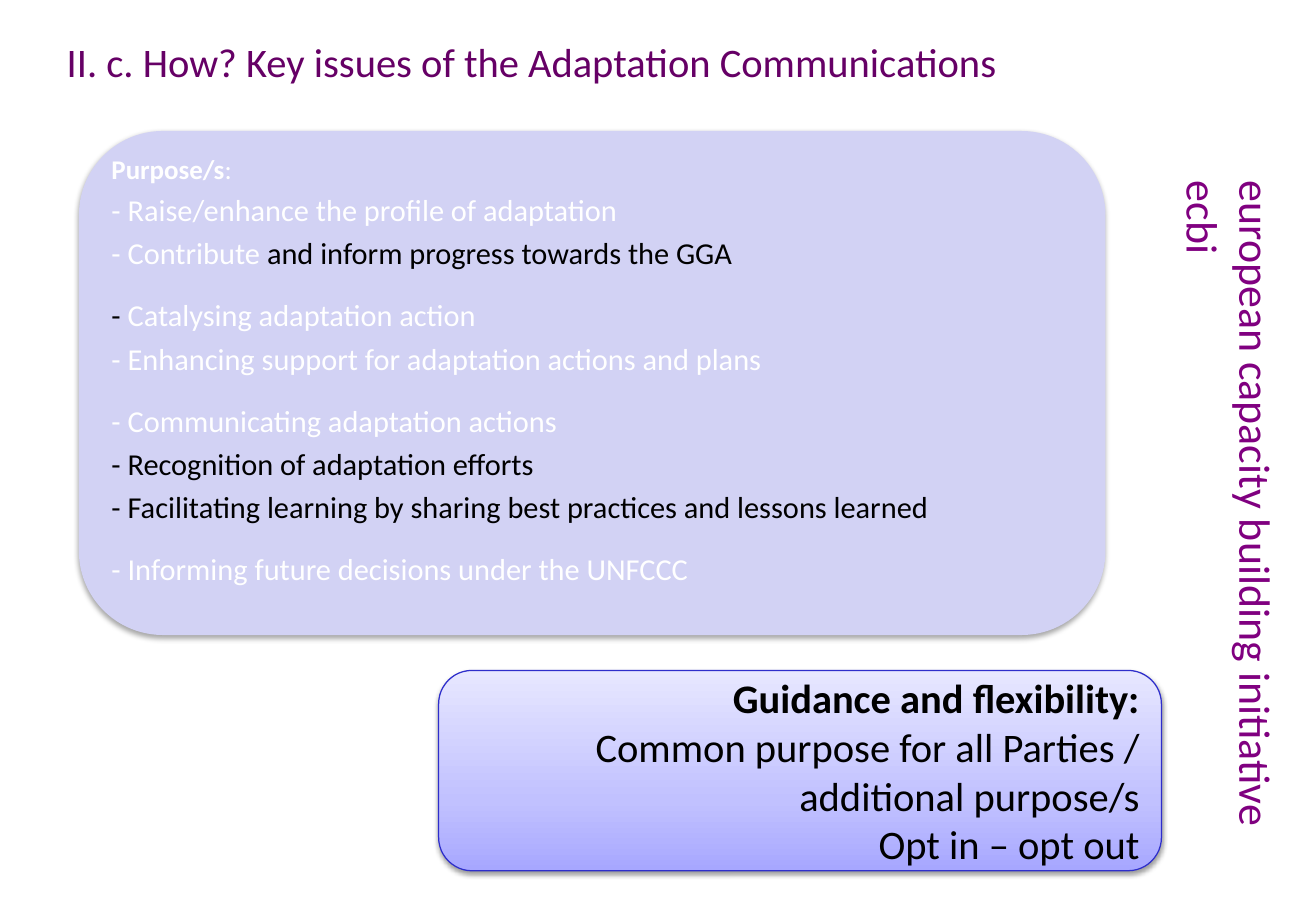
from copy import deepcopy
from dataclasses import dataclass

from lxml import etree
from pptx import Presentation
from pptx import util as u
from pptx.dml.color import RGBColor
from pptx.enum import shapes, text
from pptx.oxml.ns import qn


@dataclass(frozen=True)
class Theme:
    font: str = "Calibri"
    title: str = "660066"
    side: str = "800080"
    faded: str = "FFFFFF"
    strong: str = "000000"
    panel: str = "D2D2F4"
    border: str = "2E2ECB"
    gradient: tuple = ((0, "A7A7FF"), (0.35, "C1C1FF"), (1, "E7E7FF"))
    side_size: int = 26
    large_size: int = 24
    item_size: int = 18
    heading_size: int = 16


THEME = Theme()

PURPOSES = [
    [[("- Raise/enhance the profile of adaptation", THEME.faded)],
     [("- Contribute ", THEME.faded),
      ("and inform progress towards the GGA", THEME.strong)]],
    [[("- ", THEME.strong), ("Catalysing adaptation action", THEME.faded)],
     [("- Enhancing support for adaptation actions and plans", THEME.faded)]],
    [[("- Communicating adaptation actions", THEME.faded)],
     [("- Recognition of adaptation efforts", THEME.strong)],
     [("- Facilitating learning by sharing best practices and lessons learned",
       THEME.strong)]],
    [[("- Informing future decisions under the UNFCCC", THEME.faded)]],
]
GUIDANCE = [
    ("Guidance and flexibility:", True),
    ("Common purpose for all Parties / additional purpose/s", False),
    ("Opt in – opt out", False),
]


def place(part, box):
    part.left, part.top, part.width, part.height = (u.Cm(n) for n in box)


def write(paragraph, wording, *, size, color, bold=False, align=text.PP_ALIGN.LEFT):
    paragraph.alignment = align
    run = paragraph.add_run()
    run.text = wording
    run.font.name = THEME.font
    run.font.size = u.Pt(size)
    run.font.bold = bold
    run.font.color.rgb = RGBColor.from_string(color)


def next_paragraph(frame):
    first = frame.paragraphs[0]
    return frame.add_paragraph() if first.runs else first


def add_shadow(shape, opacity, distance):
    shape.shadow.inherit = False
    effects = shape.element.spPr.find(qn("a:effectLst"))
    outer = etree.SubElement(effects, qn("a:outerShdw"), blurRad=str(u.Pt(3.1)),
                             dist=str(u.Pt(distance)), dir="5400000", rotWithShape="0")
    shade = etree.SubElement(outer, qn("a:srgbClr"), val="000000")
    etree.SubElement(shade, qn("a:alpha"), val=str(opacity * 1000))


def add_rounded(slide, box):
    return slide.shapes.add_shape(shapes.MSO_SHAPE.ROUNDED_RECTANGLE,
                                  *(u.Cm(n) for n in box))


def fill_title(slide, box):
    title = slide.shapes.title
    place(title, box)
    frame = title.text_frame
    frame.auto_size = text.MSO_AUTO_SIZE.NONE
    write(frame.paragraphs[0], "II. c. How? Key issues of the Adaptation Communications",
          size=THEME.large_size, color=THEME.title)


def add_side_name(slide, box):
    side = slide.shapes.add_textbox(*(u.Cm(n) for n in box))
    frame = side.text_frame
    frame.word_wrap = True
    frame._txBody.bodyPr.set("vert", "eaVert")
    write(frame.paragraphs[0], "european capacity building initiative ecbi",
          size=THEME.side_size, color=THEME.side)


def purpose_line(frame, pieces, *, size, before=0, bold=False):
    paragraph = next_paragraph(frame)
    properties = paragraph._p.get_or_add_pPr()
    properties.set("marL", "0")
    properties.set("indent", "0")
    etree.SubElement(properties, qn("a:buNone"))
    paragraph.line_spacing = 0.9
    paragraph.space_before = u.Pt(before)
    paragraph.space_after = u.Pt(round(size * 0.35, 1))
    for wording, color in pieces:
        write(paragraph, wording, size=size, color=color, bold=bold)
        bold = False


def add_purposes(slide, box):
    left, top, width, height = box
    panel = add_rounded(slide, box)
    panel.fill.solid()
    panel.fill.fore_color.rgb = RGBColor.from_string(THEME.panel)
    panel.line.fill.background()
    add_shadow(panel, 35, 1.8)

    purposes = slide.placeholders[1]
    place(purposes, (left + 0.5, top + 0.53, width - 1, height - 1.06))
    panel.element.addnext(purposes.element)
    frame = purposes.text_frame
    frame.auto_size = text.MSO_AUTO_SIZE.NONE
    frame.vertical_anchor = text.MSO_ANCHOR.TOP
    frame.margin_left = frame.margin_right = u.Cm(0.18)
    frame.margin_top = frame.margin_bottom = 0
    purpose_line(frame, [("Purpose/s", THEME.faded), (":", THEME.faded)],
                 size=THEME.heading_size, bold=True)
    for group_number, group in enumerate(PURPOSES):
        for item_number, pieces in enumerate(group):
            starts_group = group_number > 0 and item_number == 0
            purpose_line(frame, pieces, size=THEME.item_size,
                         before=11 if starts_group else 0)


def add_guidance(slide, box):
    guidance = add_rounded(slide, box)
    guidance.fill.gradient()
    guidance.fill.gradient_angle = 90
    stop_list = next(guidance.element.spPr.iter(qn("a:gsLst")))
    stop_list.append(deepcopy(stop_list[0]))
    for stop, (position, color) in zip(guidance.fill.gradient_stops, THEME.gradient):
        stop.position = position
        stop.color.rgb = RGBColor.from_string(color)
    guidance.line.color.rgb = RGBColor.from_string(THEME.border)
    guidance.line.width = u.Pt(0.75)
    add_shadow(guidance, 38, 1.6)

    frame = guidance.text_frame
    frame.word_wrap = True
    frame.vertical_anchor = text.MSO_ANCHOR.MIDDLE
    for wording, bold in GUIDANCE:
        write(next_paragraph(frame), wording, size=THEME.large_size,
              color=THEME.strong, bold=bold, align=text.PP_ALIGN.RIGHT)


def main():
    deck = Presentation()
    deck.slide_width, deck.slide_height = u.Cm(27.51), u.Cm(19.05)
    slide = deck.slides.add_slide(deck.slide_layouts[1])
    add_side_name(slide, (25.04, 3.53, 1.91, 15.21))
    fill_title(slide, (1.14, 0.64, 20.3, 1.27))
    add_purposes(slide, (1.65, 2.74, 21.46, 10.54))
    add_guidance(slide, (9.17, 14.02, 15.11, 4.19))
    deck.save("out.pptx")


if __name__ == "__main__":
    main()
